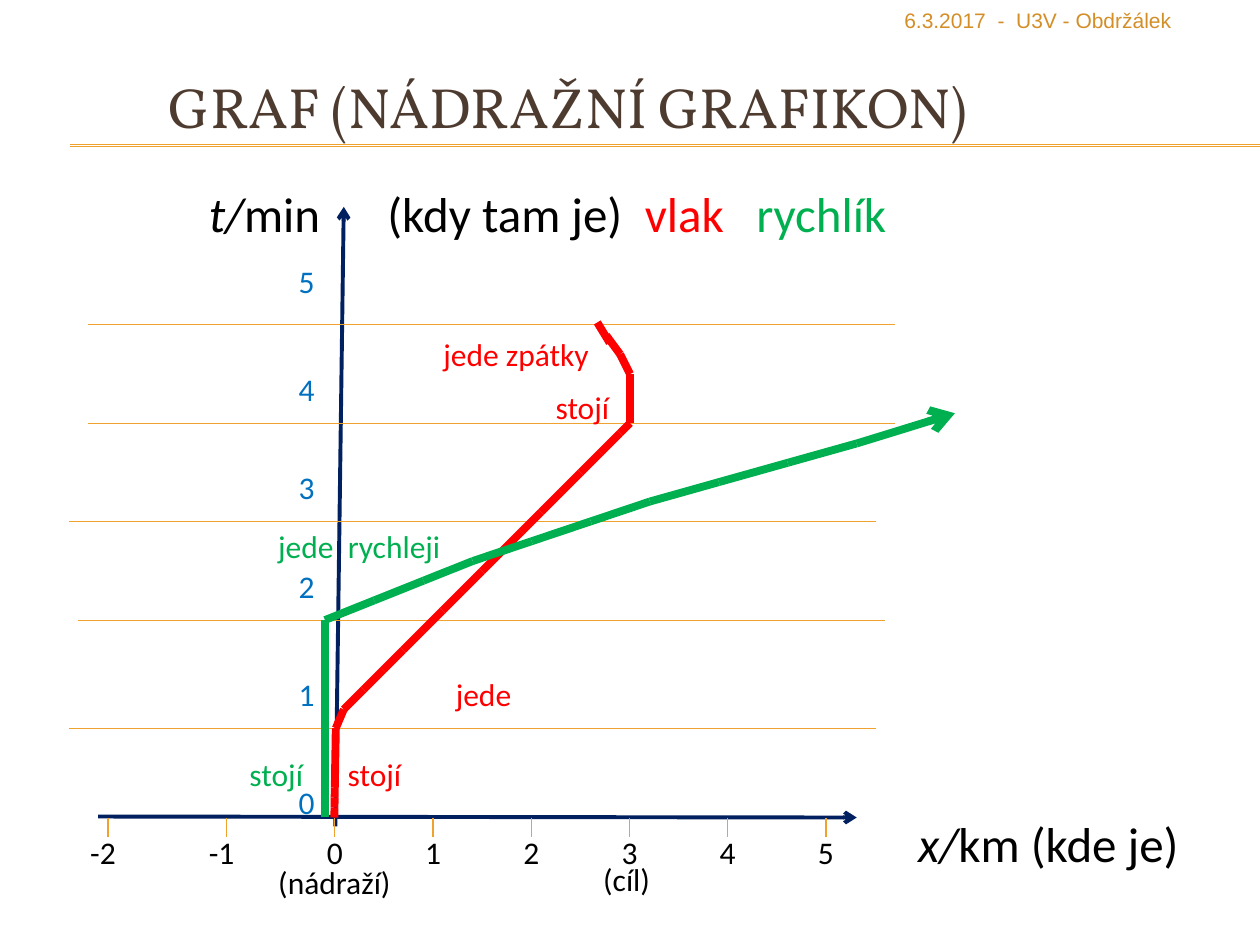
from dataclasses import dataclass

from lxml import etree
from pptx import Presentation
from pptx import util as u
from pptx.dml.color import RGBColor
from pptx.enum import shapes, text
from pptx.oxml import ns


@dataclass(frozen=True)
class Theme:
    gold: str = "F0A22E"
    date: str = "D38E27"
    brown: str = "4E3B30"
    navy: str = "002060"
    blue: str = "0070C0"
    black: str = "000000"
    red: str = "FF0000"
    green: str = "00B050"
    title_font: str = "Vollkorn"
    body_font: str = "Calibri"
    date_font: str = "Arial"
    title_size: float = 32.4
    axis_size: float = 28
    label_size: float = 18
    date_size: float = 12
    grid_width: float = 0.5
    rule_width: float = 0.75
    axis_width: float = 2.25
    track_width: float = 4.5


class GraphSlide:
    def __init__(self, slide, theme):
        self.slide = slide
        self.theme = theme

    def line(self, start, end, color, width, arrow=False):
        connector = self.slide.shapes.add_connector(
            shapes.MSO_CONNECTOR.STRAIGHT, *map(u.Cm, (*start, *end)))
        connector.line.color.rgb = RGBColor.from_string(color)
        connector.line.width = u.Pt(width)
        properties = connector._element.spPr
        if arrow:
            outline = connector.line._get_or_add_ln()
            etree.SubElement(outline, ns.qn("a:tailEnd"), type="arrow")
        etree.SubElement(properties, ns.qn("a:effectLst"))

    def track(self, start, legs, color):
        for x, y, steps in legs:
            step_x, step_y = (x - start[0]) / steps, (y - start[1]) / steps
            for _ in range(steps):
                end = start[0] + step_x, start[1] + step_y
                self.line(start, end, color, self.theme.track_width)
                start = end

    def text(self, left, top, width, height, runs, color, size=None, font=None,
             wrap=True, middle=False, tabs=()):
        box = self.slide.shapes.add_textbox(*map(u.Cm, (left, top, width, height)))
        frame = box.text_frame
        frame.word_wrap = wrap
        if middle:
            frame.vertical_anchor = text.MSO_ANCHOR.MIDDLE
        paragraph = frame.paragraphs[0]
        paragraph.font.name = font or self.theme.body_font
        paragraph.font.size = u.Pt(size or self.theme.label_size)
        paragraph.font.color.rgb = RGBColor.from_string(color)
        for words, run_color, italic in runs:
            run = paragraph.add_run()
            run.text = words
            if run_color:
                run.font.color.rgb = RGBColor.from_string(run_color)
            if italic:
                run.font.italic = True
        if tabs:
            stops = etree.Element(ns.qn("a:tabLst"))
            for position in tabs:
                etree.SubElement(stops, ns.qn("a:tab"), pos=str(u.Cm(position)), algn="l")
            paragraph._p.get_or_add_pPr().insert(0, stops)

    def label(self, left, top, width, words, color):
        self.text(left, top, width, 1.03, [(words, None, False)], color, wrap=False)


def build_heading(graph):
    theme = graph.theme
    for y in (2.92, 2.95):
        graph.line((1.42, y), (25.4, y), theme.gold, theme.rule_width)
    graph.text(3.15, 1.32, 21.59, 1.4, [("GRAF (NÁDRAŽNÍ GRAFIKON)", None, False)],
               theme.brown, theme.title_size, theme.title_font)
    graph.text(17.98, 0, 7.32, 0.81, [("6.3.2017  -  U3V - Obdržálek", None, False)],
               theme.date, theme.date_size, theme.date_font, middle=True)


def build_axes(graph):
    theme = graph.theme
    graph.line((1.98, 16.46), (17.27, 16.48), theme.navy, theme.axis_width, arrow=True)
    graph.line((6.76, 16.66), (6.93, 4.17), theme.navy, theme.axis_width, arrow=True)
    graph.text(18.26, 16.28, 5.94, 1.45, [("x/", None, True), ("km (kde je)", None, False)],
               theme.black, theme.axis_size)
    graph.text(3.96, 3.58, 15.29, 1.45,
               [("t/", None, True), ("min\t(kdy tam je)\t", None, False),
                ("vlak\t", theme.red, False), ("rychlík", theme.green, False)],
               theme.black, theme.axis_size, tabs=(3.6, 8.79, 11.04))

    ticks = {-2: 2.18, -1: 4.57} | {km: 6.75 + 1.98 * km for km in range(6)}
    for km, x in ticks.items():
        graph.line((x, 16.48), (x, 16.87), theme.gold, theme.rule_width)
        offset, width = (0.61, 1.04) if km < 0 else (0.41, 0.84)
        graph.label(x - offset, 16.66, width, str(km), theme.black)

    for left, y in ((1.4, 14.68), (1.58, 12.5), (1.4, 10.52), (1.78, 8.53), (1.78, 6.55)):
        graph.line((left, y), (left + 16.27, y), theme.gold, theme.grid_width)
    for minute, top in enumerate((15.67, 13.49, 11.3, 9.32, 7.34, 5.16)):
        graph.label(5.77, top, 0.84, str(minute), theme.blue)


def build_tracks(graph):
    theme = graph.theme
    graph.track((6.74, 16.48),
                [(6.77, 14.68, 9), (6.93, 14.3, 1), (12.5, 8.73, 14), (12.7, 8.53, 1),
                 (12.7, 7.94, 1), (12.7, 7.54, 1), (12.5, 7.14, 1), (12.22, 6.76, 1)],
                theme.red)
    graph.track((12.29, 6.91), [(12.04, 6.5, 1)], theme.red)
    graph.track((6.55, 16.46),
                [(6.55, 14.68, 9), (6.55, 12.7, 5), (6.55, 12.5, 1), (9.53, 11.31, 3),
                 (13.1, 10.11, 3), (17.27, 8.94, 3)],
                theme.green)
    graph.line((17.27, 8.94), (19.25, 8.33), theme.green, theme.track_width, arrow=True)

    for left, top, width, words, color in (
        (5.36, 17.27, 2.79, "(nádraží)", theme.black),
        (11.91, 17.22, 1.47, "(cíl)", theme.black),
        (6.76, 15.09, 1.6, "stojí", theme.red),
        (8.94, 13.49, 1.65, "jede", theme.red),
        (10.95, 7.7, 1.6, "stojí", theme.red),
        (8.69, 6.63, 3.48, "jede zpátky", theme.red),
        (4.78, 15.09, 1.6, "stojí", theme.green),
        (5.36, 10.49, 3.96, "jede  rychleji", theme.green),
    ):
        graph.label(left, top, width, words, color)


def main():
    presentation = Presentation()
    presentation.slide_width = u.Cm(25.4)
    presentation.slide_height = u.Cm(19.05)
    slide = presentation.slides.add_slide(presentation.slide_layouts[6])
    graph = GraphSlide(slide, Theme())
    build_heading(graph)
    build_axes(graph)
    build_tracks(graph)
    presentation.save("out.pptx")


if __name__ == "__main__":
    main()
